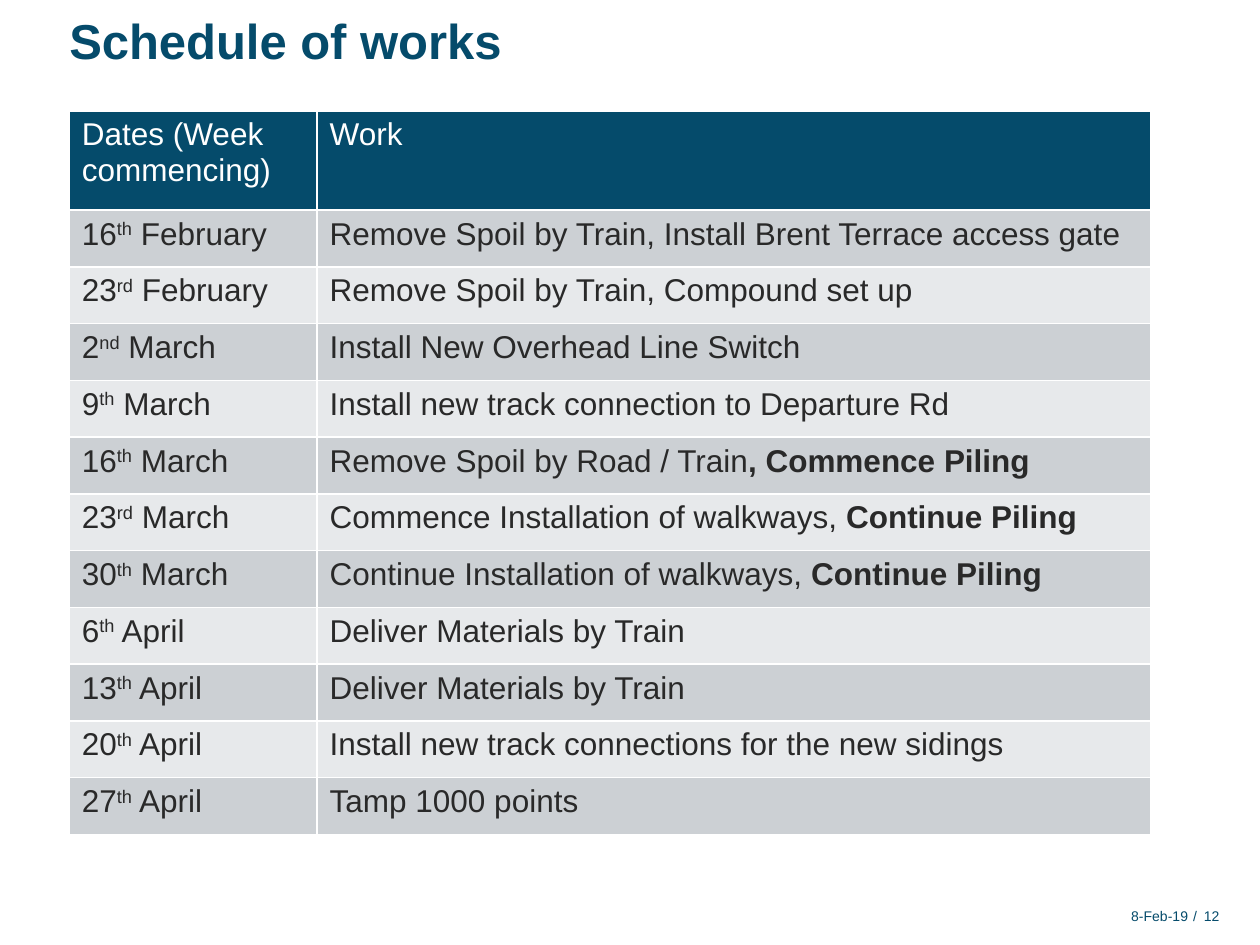
from pptx import Presentation
from pptx.dml.color import RGBColor
from pptx.enum.text import MSO_ANCHOR, MSO_AUTO_SIZE, PP_ALIGN
from pptx.oxml import parse_xml
from pptx.oxml.ns import nsdecls
from pptx.util import Pt

LEFT, RIGHT = PP_ALIGN.LEFT, PP_ALIGN.RIGHT
TOP, MIDDLE = MSO_ANCHOR.TOP, MSO_ANCHOR.MIDDLE
NONE = MSO_AUTO_SIZE.NONE
BLUE, WHITE, DARK = "054B6B", "FFFFFF", "292929"
BANDS = ["CCD0D4", "E7E9EB"]


def color(code):
    return RGBColor.from_string(code)


def add_run(para, text, code, size, bold=False):
    run = para.add_run()
    run.text = text
    style = {"name": "Arial", "size": Pt(size), "bold": bold}
    for key, value in style.items():
        setattr(run.font, key, value)
    run.font.color.rgb = color(code)
    return run


deck = Presentation()
deck.slide_width, deck.slide_height = Pt(720), Pt(540)
slide = deck.slides.add_slide(deck.slide_layouts[5])

title = slide.shapes.title
title.left, title.top, title.width, title.height = Pt(39.6), Pt(5.8), Pt(572.4), Pt(33.8)
foots = [
    ("8-Feb-19", 511.2, 167.8, RIGHT),
    ("/", 681.8, 2.9, LEFT),
    ("12", 685.4, 11.5, RIGHT),
]
texts = [(title, "Schedule of works", 28, True, LEFT, TOP)]
for text, left, width, align in foots:
    box = slide.shapes.add_textbox(Pt(left), Pt(516.2), Pt(width), Pt(14.4))
    texts.append((box, text, 8, False, align, MIDDLE))

for shape, text, size, bold, align, anchor in texts:
    frame = shape.text_frame
    layout = {
        "margin_left": 0, "margin_right": 0, "margin_top": 0, "margin_bottom": 0,
        "word_wrap": shape is title, "auto_size": NONE, "vertical_anchor": anchor,
    }
    for key, value in layout.items():
        setattr(frame, key, value)
    para = frame.paragraphs[0]
    para.alignment = align
    add_run(para, text, BLUE, size, bold)

works = [
    ("16", "th", "February", "Remove Spoil by Train, Install Brent Terrace access gate", ""),
    ("23", "rd", "February", "Remove Spoil by Train, Compound set up", ""),
    ("2", "nd", "March", "Install New Overhead Line Switch", ""),
    ("9", "th", "March", "Install new track connection to Departure Rd", ""),
    ("16", "th", "March", "Remove Spoil by Road / Train", ", Commence Piling"),
    ("23", "rd", "March", "Commence Installation of walkways, ", "Continue Piling"),
    ("30", "th", "March", "Continue Installation of walkways, ", "Continue Piling"),
    ("6", "th", "April", "Deliver Materials by Train", ""),
    ("13", "th", "April", "Deliver Materials by Train", ""),
    ("20", "th", "April", "Install new track connections for the new sidings", ""),
    ("27", "th", "April", "Tamp 1000 points", ""),
]
table = slide.shapes.add_table(
    len(works) + 1, 2, Pt(39.6), Pt(63.4), Pt(617.8), Pt(414)).table
table.columns[0].width, table.columns[1].width = Pt(141.6), Pt(476.2)
for row in table.rows:
    row.height = Pt(32.45)
table.rows[0].height = Pt(56.7)

for col, text in enumerate(["Dates (Week commencing)", "Work"]):
    add_run(table.cell(0, col).text_frame.paragraphs[0], text, WHITE, 18)

for row, (day, mark, month, work, extra) in enumerate(works, 1):
    date, task = [table.cell(row, col).text_frame.paragraphs[0] for col in (0, 1)]
    add_run(date, day, DARK, 18)
    raised = add_run(date, mark, DARK, 18)
    raised.font._element.set("baseline", "30000")
    add_run(date, f" {month}", DARK, 18)
    add_run(task, work, DARK, 18)
    if extra:
        add_run(task, extra, DARK, 18, True)

for row, line in enumerate(table.rows):
    for cell in line.cells:
        props = cell._tc.get_or_add_tcPr()
        for side in "LRTB":
            props.append(parse_xml(
                f'<a:ln{side} {nsdecls("a")} w="12700"><a:solidFill>'
                f'<a:srgbClr val="{WHITE}"/></a:solidFill></a:ln{side}>'))
        cell.fill.solid()
        cell.fill.fore_color.rgb = color(BANDS[(row - 1) % 2] if row else BLUE)

deck.save("out.pptx")
